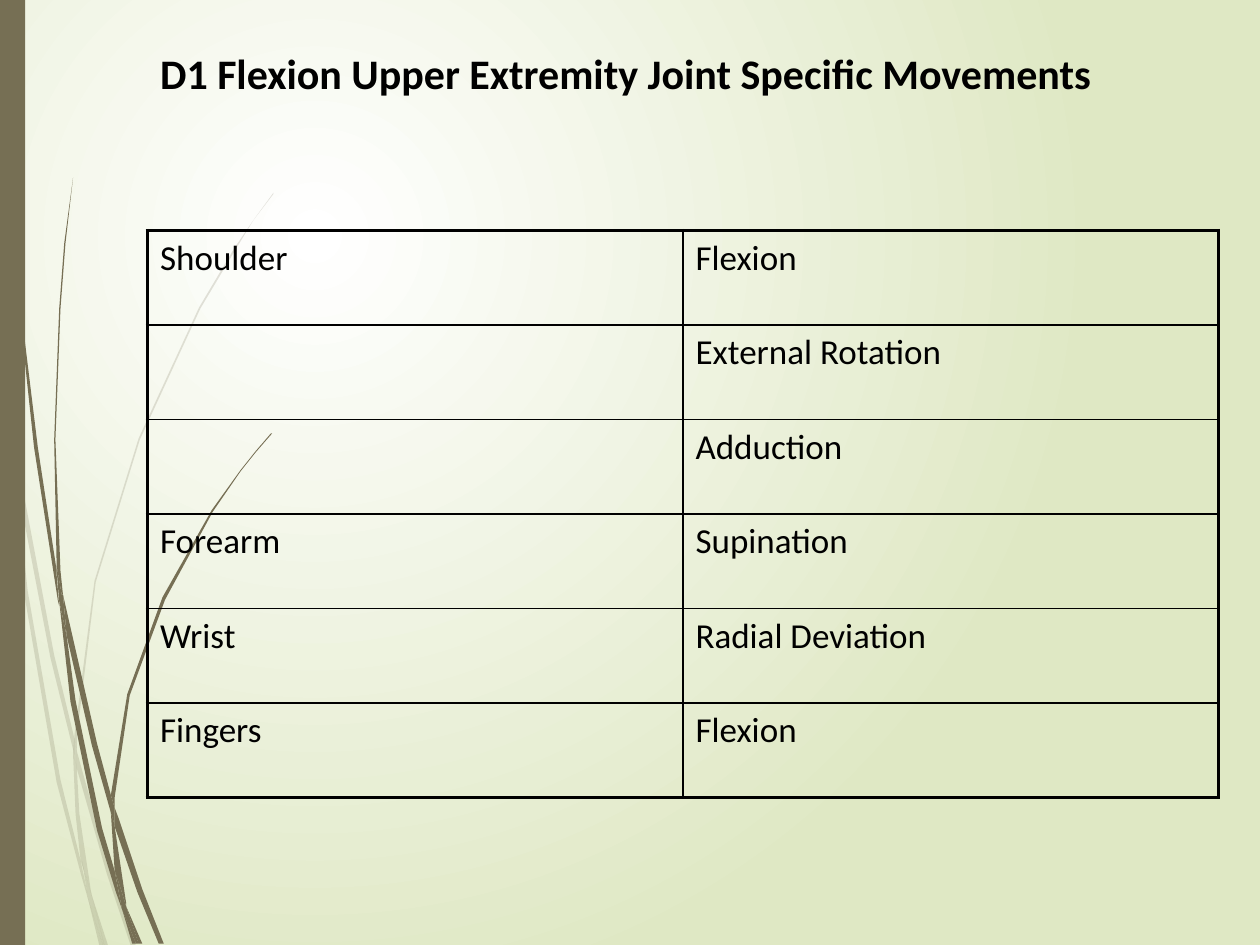
from lxml.etree import SubElement
from pptx import Presentation
from pptx.dml.color import RGBColor
from pptx.enum.shapes import MSO_SHAPE as Shape
from pptx.enum.text import MSO_ANCHOR as Anchor, MSO_AUTO_SIZE as AutoSize, PP_ALIGN as Align
from pptx.oxml.ns import qn
from pptx.util import Inches, Pt

BLACK = RGBColor(0x00, 0x00, 0x00)
WHITE = RGBColor(0xFF, 0xFF, 0xFF)
PALE_GREEN = RGBColor(0xDF, 0xE8, 0xC4)
OLIVE = RGBColor(0x76, 0x6F, 0x54)
FONT = "Calibri"

TITLE = "D1 Flexion Upper Extremity Joint Specific Movements"
MOVEMENTS = [
    ("Shoulder", "Flexion"),
    ("", "External Rotation"),
    ("", "Adduction"),
    ("Forearm", "Supination"),
    ("Wrist", "Radial Deviation"),
    ("Fingers", "Flexion"),
]
LEFT, WIDTH = 1.17, 8.5
TABLE_TOP, ROW_HEIGHT = 1.83, 0.75
THIN, THICK = 1, 2.25

# Outlines of the grass blades, as corner points in inches
FAINT_BLADES = [
    [(0.08, 3.5), (0.06, 3.22), (0, 2.82), (0, 2.99), (0.07, 3.44)],
    [(0.4, 5.22), (0.59, 5.99), (0.59, 5.86), (0.43, 5.2), (0.1, 3.45), (0.12, 3.76)],
    [(0.64, 6.07), (0.61, 5.96), (0.61, 6.1), (0.85, 6.94), (1.04, 7.51), (1.08, 7.51),
     (0.88, 6.92)],
    [(0.83, 7.51), (0.86, 7.51), (0.73, 7.11)],
    [(0.64, 6.83), (0.48, 6.19), (0.22, 4.69), (0.12, 3.76), (0.08, 3.5), (0.19, 4.7),
     (0.45, 6.21), (0.64, 6.93), (0.7, 7.14), (0.69, 7.07)],
    [(0.58, 5.99), (0.6, 6.46), (0.64, 6.83), (0.67, 6.92), (0.73, 7.11), (0.72, 7.06),
     (0.63, 6.46), (0.61, 6.1), (0.61, 6.08)],
    [(0.61, 5.84), (0.76, 4.62), (1.11, 3.49), (1.59, 2.45), (1.87, 1.98), (2.01, 1.75),
     (2.17, 1.54), (2.17, 1.53), (2.01, 1.75), (1.86, 1.97), (1.58, 2.44), (1.1, 3.48),
     (0.75, 4.61), (0.59, 5.84), (0.59, 5.86), (0.61, 5.96)],
    [(0.7, 7.14), (0.79, 7.51), (0.82, 7.51)],
    [(0.61, 6.08), (0.61, 6.1), (0.61, 5.96), (0.59, 5.86), (0.58, 5.99)],
    [(0.67, 6.92), (0.65, 6.83), (0.69, 7.07), (0.7, 7.14), (0.82, 7.51), (0.83, 7.51),
     (0.73, 7.11)],
]
SOLID_BLADES = [
    [(0.05, 1.1), (0.14, 2.33), (0.27, 3.55), (0.46, 4.77), (0.47, 4.81), (0.45, 4.57),
     (0.45, 4.53), (0.3, 3.55), (0.15, 2.32), (0.06, 1.09), (0.04, 0.48), (0.03, 0),
     (0.02, 0), (0.03, 0.48)],
    [(0.73, 5.92), (0.88, 6.45), (0.88, 6.33), (0.88, 6.31), (0.77, 5.9), (0.5, 4.72),
     (0.53, 5.05)],
    [(0.94, 6.49), (0.91, 6.41), (0.91, 6.56), (1.09, 7.08), (1.26, 7.49), (1.3, 7.49),
     (1.13, 7.06)],
    [(0.91, 6.91), (0.81, 6.57), (0.6, 5.56), (0.53, 5.05), (0.47, 4.77), (0.56, 5.57),
     (0.77, 6.59), (0.92, 7.08), (0.97, 7.22), (0.96, 7.17)],
    [(0.5, 4.72), (0.48, 4.53), (0.44, 3.49), (0.48, 2.45), (0.52, 1.93), (0.58, 1.41),
     (0.51, 1.93), (0.47, 2.45), (0.43, 3.49), (0.45, 4.49), (0.49, 4.72)],
    [(1.1, 7.49), (1.13, 7.49), (1, 7.19)],
    [(0.47, 4.77), (0.53, 5.05), (0.5, 4.72), (0.49, 4.72), (0.45, 4.49), (0.45, 4.53)],
    [(0.91, 6.33), (1.03, 5.52), (1.31, 4.76), (1.69, 4.06), (1.91, 3.74), (2.03, 3.59),
     (2.16, 3.44), (2.15, 3.44), (2.03, 3.58), (1.91, 3.73), (1.68, 4.05), (1.29, 4.74),
     (1.01, 5.51), (0.88, 6.31), (0.91, 6.41)],
    [(0.97, 7.22), (1.05, 7.49), (1.08, 7.49)],
    [(0.88, 6.45), (0.91, 6.91), (0.96, 7.06), (1, 7.19), (1, 7.16), (0.91, 6.56),
     (0.9, 6.51)],
    [(0.88, 6.45), (0.9, 6.51), (0.91, 6.56), (0.91, 6.41), (0.88, 6.31), (0.88, 6.33)],
    [(0.96, 7.06), (0.91, 6.91), (0.96, 7.17), (0.97, 7.22), (1.08, 7.49), (1.1, 7.49),
     (1, 7.19)],
]


def paint_background(slide):
    fill = slide.background.fill
    fill.gradient()
    for stop, color, position in zip(fill.gradient_stops, (WHITE, PALE_GREEN), (0, 1)):
        stop.color.rgb = color
        stop.position = position
    gradient = next(slide.element.iter(qn("a:gradFill")))
    gradient.remove(gradient.find(qn("a:lin")))
    circle = SubElement(gradient, qn("a:path"), path="circle")
    SubElement(circle, qn("a:fillToRect"), l="50000", t="50000", r="100000", b="100000")


def paint_olive(shape, opacity=100):
    shape.shadow.inherit = False
    shape.fill.solid()
    shape.fill.fore_color.rgb = OLIVE
    shape.line.fill.background()
    if opacity < 100:
        color = next(shape.element.spPr.iter(qn("a:srgbClr")))
        SubElement(color, qn("a:alpha"), val=str(opacity * 1000))


def add_blades(slide, outlines, opacity):
    group = slide.shapes.add_group_shape()
    for outline in outlines:
        start, *corners = [(Inches(x), Inches(y)) for x, y in outline]
        builder = group.shapes.build_freeform(*start)
        builder.add_line_segments(corners, close=True)
        paint_olive(builder.convert_to_shape(), opacity)


def add_text(frame, text, size, bold=False):
    paragraph = frame.paragraphs[0]
    paragraph.alignment = Align.LEFT
    run = paragraph.add_run()
    run.text = text
    run.font.name = FONT
    run.font.size = Pt(size)
    run.font.bold = bold
    run.font.color.rgb = BLACK


def set_borders(cell, widths):
    """Draw the left, right, top and bottom borders, with widths in points."""
    properties = cell._tc.get_or_add_tcPr()
    for index, (side, width) in enumerate(zip("LRTB", widths)):
        line = SubElement(properties, qn(f"a:ln{side}"), w=str(Pt(width)))
        fill = SubElement(line, qn("a:solidFill"))
        SubElement(fill, qn("a:srgbClr"), val=str(BLACK))
        properties.insert(index, line)


def add_movement_table(slide):
    row_count, column_count = len(MOVEMENTS), len(MOVEMENTS[0])
    table = slide.shapes.add_table(
        row_count, column_count, Inches(LEFT), Inches(TABLE_TOP),
        Inches(WIDTH), Inches(ROW_HEIGHT * row_count)).table
    table.first_row = table.horz_banding = False
    for row, texts in enumerate(MOVEMENTS):
        for column, text in enumerate(texts):
            cell = table.cell(row, column)
            cell.fill.background()
            outer_edges = (column == 0, column == column_count - 1,
                           row == 0, row == row_count - 1)
            set_borders(cell, [THICK if outer else THIN for outer in outer_edges])
            if text:
                add_text(cell.text_frame, text, 20)


def add_title(slide):
    title = slide.shapes.title
    title.element.getparent().append(title.element)
    title.left, title.top = Inches(LEFT), Inches(0.33)
    title.width, title.height = Inches(WIDTH), Inches(1.25)
    frame = title.text_frame
    frame.auto_size = AutoSize.NONE
    frame.vertical_anchor = Anchor.TOP
    add_text(frame, TITLE, 24, bold=True)


def main():
    presentation = Presentation()
    presentation.slide_width, presentation.slide_height = Inches(10), Inches(7.5)
    slide = presentation.slides.add_slide(presentation.slide_layouts[5])
    paint_background(slide)
    add_blades(slide, FAINT_BLADES, 20)
    add_blades(slide, SOLID_BLADES, 100)
    paint_olive(slide.shapes.add_shape(Shape.RECTANGLE, 0, 0, Inches(0.2), Inches(7.5)))
    add_title(slide)
    add_movement_table(slide)
    presentation.save("out.pptx")


if __name__ == "__main__":
    main()
